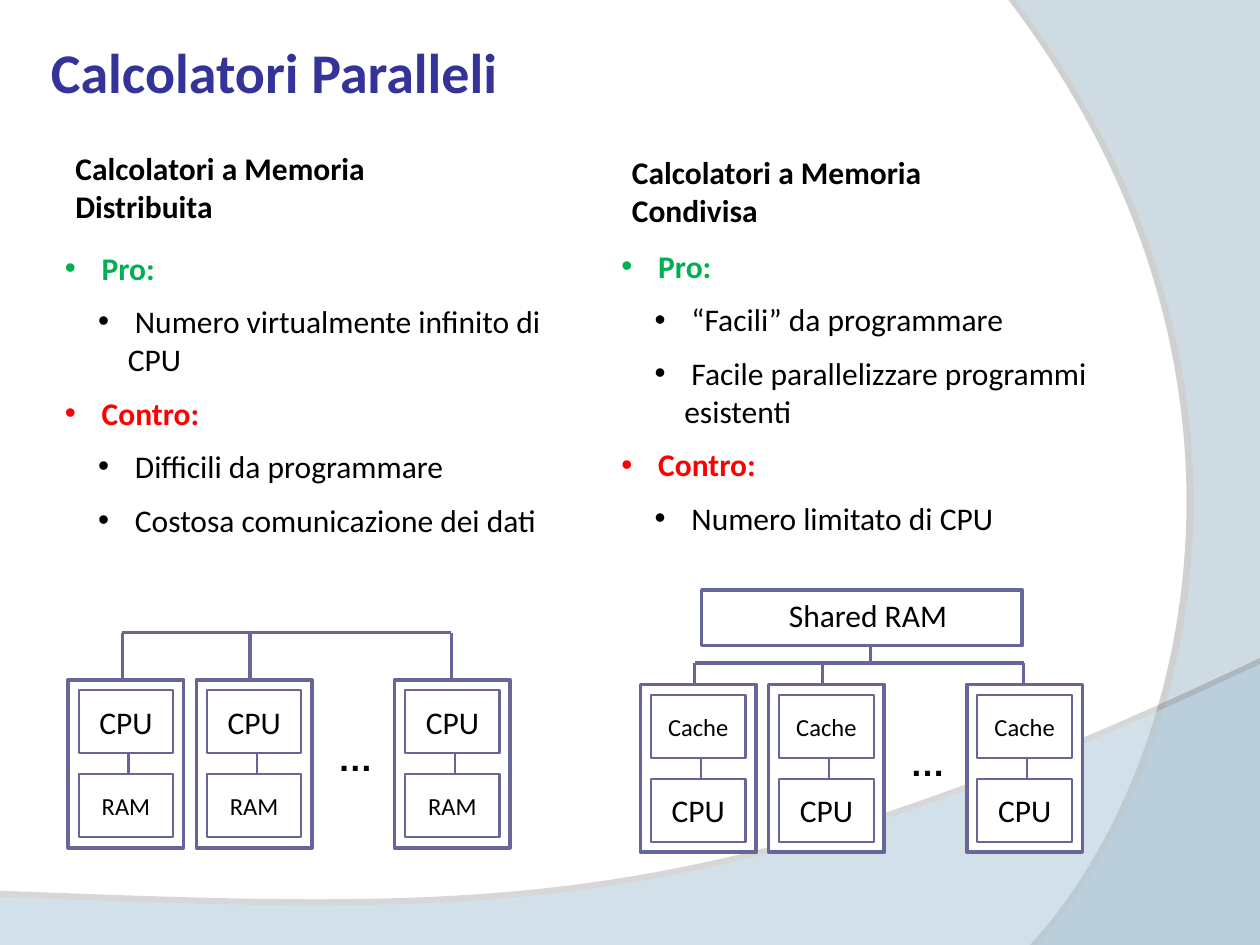
from dataclasses import dataclass

from lxml import etree
from pptx import Presentation
from pptx.dml.color import RGBColor
from pptx.enum.shapes import MSO_CONNECTOR, MSO_SHAPE
from pptx.enum.text import MSO_ANCHOR, PP_ALIGN
from pptx.oxml.ns import qn
from pptx.util import Pt

RECTANGLE = MSO_SHAPE.RECTANGLE
STRAIGHT = MSO_CONNECTOR.STRAIGHT
MIDDLE = MSO_ANCHOR.MIDDLE
LEFT, CENTER = PP_ALIGN.LEFT, PP_ALIGN.CENTER

COLORS = {
    "title": "333399",
    "text": "000000",
    "pro": "00B050",
    "contro": "FF0000",
    "outline": "666699",
    "card": "FFFFFF",
    "wave": "CCECFF",
    "shadow": "000000",
}
BODY = {"name": "Calibri", "size": Pt(18), "bold": False}
SMALL = {**BODY, "size": Pt(14)}
STRONG = {**BODY, "bold": True}
TITLE = {**STRONG, "size": Pt(32)}
ELLIPSIS = {"name": "Arial", "size": Pt(20), "bold": True}

THICK, THIN = 2, 1.25
CARD_OFFSETS = (0, 73.25, 186.5)
STEM_OFFSETS = (31, 104, 219)
BULLET_HANG = 17


@dataclass
class Box:
    left: float
    top: float
    width: float
    height: float


@dataclass
class Topic:
    label: str
    color: str
    points: tuple[str, ...]


@dataclass
class Column:
    heading: str
    heading_box: Box
    list_box: Box
    topics: tuple[Topic, ...]


@dataclass
class Cluster:
    left: float
    top: float
    bus_top: float
    units: tuple[tuple[str, dict], ...]


@dataclass
class Wave:
    before: tuple
    curve: tuple
    after: tuple
    opacity: int
    shadow_opacity: int
    distance: float
    direction: int


COLUMNS = (
    Column("Calcolatori a Memoria Distribuita", Box(36, 81.5, 198, 50), Box(30, 138.5, 310, 204), (
        Topic("Pro:", "pro", ("Numero virtualmente infinito di CPU",)),
        Topic("Contro:", "contro", ("Difficili da programmare", "Costosa comunicazione dei dati")),
    )),
    Column("Calcolatori a Memoria Condivisa", Box(354, 84, 192, 50), Box(348, 137.5, 324, 181), (
        Topic("Pro:", "pro", ("“Facili” da programmare", "Facile parallelizzare programmi esistenti")),
        Topic("Contro:", "contro", ("Numero limitato di CPU",)),
    )),
)
DISTRIBUTED = Cluster(39, 388.5, 361.5, (("CPU", BODY), ("RAM", SMALL)))
SHARED = Cluster(366, 391, 378.75, (("Cache", SMALL), ("CPU", BODY)))
WAVES = (
    Wave(((732, -5), (732, 540)),
         ((592.5, 540), (681, 445), (746, 212.5), (576, -5.5)), (), 40, 45, 4, 180),
    Wave(((0, 546), (720, 546)),
         ((720, 379.5), (402.5, 530.5), (281.5, 523), (0, 512.5)), (), 45, 35, 3.5, 270),
)


def points(box: Box) -> list:
    return [Pt(value) for value in (box.left, box.top, box.width, box.height)]


def write(paragraph, text: str, style: dict, color: str = "text") -> None:
    run = paragraph.add_run()
    run.text = text
    for attribute, value in style.items():
        setattr(run.font, attribute, value)
    run.font.color.rgb = RGBColor.from_string(COLORS[color])


def add_text(slide, box: Box, text: str, style: dict, color: str = "text",
             align=LEFT, wrap: bool = True) -> None:
    frame = slide.shapes.add_textbox(*points(box)).text_frame
    frame.word_wrap = wrap
    frame.paragraphs[0].alignment = align
    write(frame.paragraphs[0], text, style, color)


def add_bullet(paragraph, margin: float) -> None:
    properties = paragraph._p.get_or_add_pPr()
    properties.set("marL", str(Pt(margin)))
    properties.set("indent", str(-Pt(BULLET_HANG)))
    etree.SubElement(properties, qn("a:buFont"), typeface="Arial")
    etree.SubElement(properties, qn("a:buChar"), char="•")


def add_column(slide, column: Column) -> None:
    add_text(slide, column.heading_box, column.heading, STRONG)
    frame = slide.shapes.add_textbox(*points(column.list_box)).text_frame
    frame.word_wrap = True
    entries = []
    for topic in column.topics:
        entries.append((topic.label, STRONG, topic.color, BULLET_HANG))
        entries.extend((point, BODY, "text", 36) for point in topic.points)
    for index, (text, style, color, margin) in enumerate(entries):
        paragraph = frame.add_paragraph() if index else frame.paragraphs[0]
        add_bullet(paragraph, margin)
        if index:
            paragraph.space_before = Pt(9)
        write(paragraph, " " + text, style, color)


def add_rectangle(slide, box: Box, weight: float, fill: str = ""):
    rectangle = slide.shapes.add_shape(RECTANGLE, *points(box))
    rectangle.shadow.inherit = False
    if fill:
        rectangle.fill.solid()
        rectangle.fill.fore_color.rgb = RGBColor.from_string(COLORS[fill])
    else:
        rectangle.fill.background()
    rectangle.line.color.rgb = RGBColor.from_string(COLORS["outline"])
    rectangle.line.width = Pt(weight)
    return rectangle


def add_line(slide, x1: float, y1: float, x2: float, y2: float, weight: float) -> None:
    line = slide.shapes.add_connector(STRAIGHT, Pt(x1), Pt(y1), Pt(x2), Pt(y2))
    line.line.color.rgb = RGBColor.from_string(COLORS["outline"])
    line.line.width = Pt(weight)
    etree.SubElement(line._element.spPr, qn("a:effectLst"))


def add_cluster(slide, cluster: Cluster) -> None:
    top = cluster.top
    for offset in CARD_OFFSETS:
        left = cluster.left + offset
        add_rectangle(slide, Box(left, top, 66, 96), THICK, "card")
        for row, (label, style) in enumerate(cluster.units):
            unit = add_rectangle(slide, Box(left + 6, top + 6 + 48 * row, 54, 36), THIN)
            frame = unit.text_frame
            frame.word_wrap = False
            frame.vertical_anchor = MIDDLE
            frame.paragraphs[0].alignment = CENTER
            write(frame.paragraphs[0], label, style)
        add_line(slide, left + 34.5, top + 42, left + 34.5, top + 54, THIN)
    add_text(slide, Box(cluster.left + 147, top + 29, 34.5, 31), "…", ELLIPSIS, wrap=False)
    stems = [cluster.left + offset for offset in STEM_OFFSETS]
    add_line(slide, stems[0], cluster.bus_top, stems[-1], cluster.bus_top, THICK)
    for stem in stems:
        add_line(slide, stem, cluster.bus_top, stem, top, THICK)


def bezier(curve: tuple, steps: int = 60) -> list:
    weights = [((1 - t) ** 3, 3 * t * (1 - t) ** 2, 3 * t ** 2 * (1 - t), t ** 3)
               for t in (step / steps for step in range(steps + 1))]
    return [tuple(sum(w * p[axis] for w, p in zip(row, curve)) for axis in (0, 1))
            for row in weights]


def add_wave(slide, wave: Wave) -> None:
    outline = [(Pt(x), Pt(y)) for x, y in (*wave.before, *bezier(wave.curve), *wave.after)]
    builder = slide.shapes.build_freeform(*outline[0], scale=1.0)
    builder.add_line_segments(outline[1:], close=True)
    shape = builder.convert_to_shape()
    shape.fill.solid()
    shape.fill.fore_color.rgb = RGBColor.from_string(COLORS["wave"])
    shape.line.fill.background()
    shape.shadow.inherit = False
    properties = shape._element.spPr
    fill_color = properties.find(qn("a:solidFill")).find(qn("a:srgbClr"))
    etree.SubElement(fill_color, qn("a:alpha"), val=str(wave.opacity * 1000))
    shadow = etree.SubElement(properties.find(qn("a:effectLst")), qn("a:outerShdw"),
                              blurRad="0", dist=str(Pt(wave.distance)),
                              dir=str(wave.direction * 60000), algn="ctr", rotWithShape="0")
    shadow_color = etree.SubElement(shadow, qn("a:srgbClr"), val=COLORS["shadow"])
    etree.SubElement(shadow_color, qn("a:alpha"), val=str(wave.shadow_opacity * 1000))


def main() -> None:
    deck = Presentation()
    deck.slide_width, deck.slide_height = Pt(720), Pt(540)
    slide = deck.slides.add_slide(deck.slide_layouts[6])
    for column in COLUMNS:
        add_column(slide, column)
    add_text(slide, Box(22, 18, 572, 45.5), "Calcolatori Paralleli", TITLE, "title")
    add_cluster(slide, DISTRIBUTED)
    for wave in WAVES:
        add_wave(slide, wave)
    add_rectangle(slide, Box(401, 337, 183, 32), THICK)
    add_cluster(slide, SHARED)
    add_text(slide, Box(406, 337, 180, 29), "Shared RAM", BODY, align=CENTER)
    add_line(slide, 497.5, 369, 497.5, SHARED.bus_top, THICK)
    deck.save("out.pptx")


if __name__ == "__main__":
    main()
